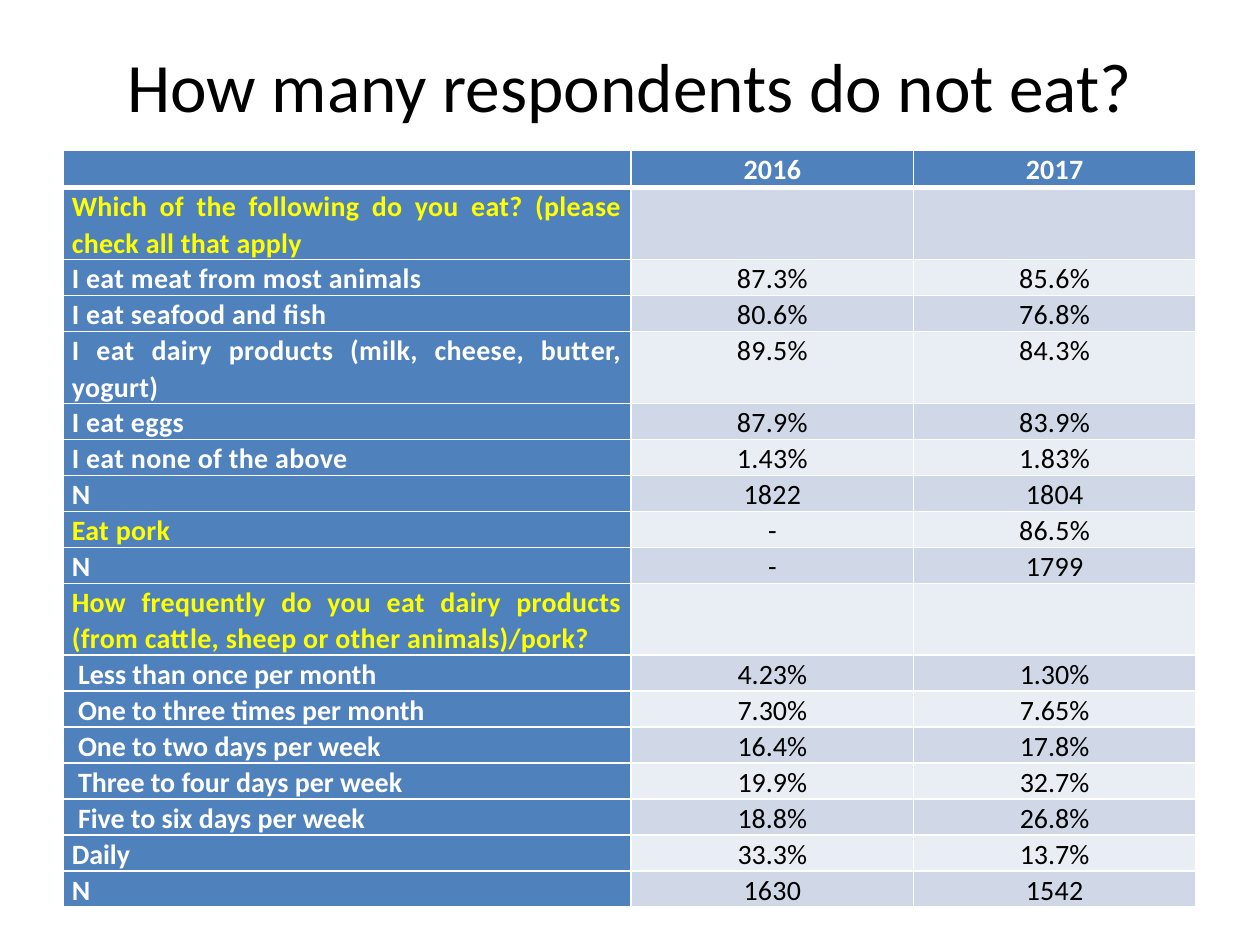
from lxml import etree
from pptx import Presentation
from pptx import util as u
from pptx.dml.color import RGBColor
from pptx.enum import text
from pptx.oxml.ns import qn

TITLE = "How many respondents do not eat?"
HEADER = ("", "2016", "2017")
ROWS = [
    ("question", "Which of the following do you eat? (please check all that apply", "", ""),
    ("answer", "I eat meat from most animals", "87.3%", "85.6%"),
    ("answer", "I eat seafood and fish", "80.6%", "76.8%"),
    ("answer", "I eat dairy products (milk, cheese, butter, yogurt)", "89.5%", "84.3%"),
    ("answer", "I eat eggs", "87.9%", "83.9%"),
    ("answer", "I eat none of the above", "1.43%", "1.83%"),
    ("answer", "N", "1822", "1804"),
    ("question", "Eat pork", "-", "86.5%"),
    ("answer", "N", "-", "1799"),
    ("question", "How frequently do you eat dairy products (from cattle, sheep or other animals)/pork?", "", ""),
    ("frequency", " Less than once per month", "4.23%", "1.30%"),
    ("frequency", " One to three times per month", "7.30%", "7.65%"),
    ("frequency", " One to two days per week", "16.4%", "17.8%"),
    ("frequency", " Three to four days per week", "19.9%", "32.7%"),
    ("frequency", " Five to six days per week", "18.8%", "26.8%"),
    ("frequency", "Daily", "33.3%", "13.7%"),
    ("answer", "N", "1630", "1542"),
]
THEME = {
    "font": "Calibri",
    "title_size": 39.6,
    "table_size": 16,
    "line_spacing": 1.07,
    "tracking": {"header": 20, "question": 20, "answer": 20, "frequency": 0},
    "label_colors": {"question": "FFFF00", "answer": "FFFFFF", "frequency": "FFFFFF"},
    "white": "FFFFFF",
    "black": "000000",
    "blue": "4F81BD",
    "bands": ("D0D8E8", "E9EDF4"),
}
COLUMN_WIDTHS = (4.51, 2.24, 2.24)
LINE_HEIGHT = 0.28
LINE_CHARACTERS = 45
ALIGN = text.PP_ALIGN
ANCHOR = text.MSO_ANCHOR


def set_all(target, values):
    for name, value in values.items():
        setattr(target, name, value)


def write(paragraph, words, size, color, bold=False, tracking=0):
    run = paragraph.add_run()
    run.text = words
    set_all(run.font, {"name": THEME["font"], "size": u.Pt(size), "bold": bold})
    run.font.color.rgb = RGBColor.from_string(color)
    run.font._element.set("spc", str(tracking))


def add_borders(cell, top, bottom):
    properties = cell._tc.get_or_add_tcPr()
    for index, (side, points) in enumerate(zip("LRTB", (1, 1, top, bottom))):
        line = etree.Element(qn(f"a:ln{side}"), w=str(u.Pt(points)))
        fill = etree.SubElement(line, qn("a:solidFill"))
        etree.SubElement(fill, qn("a:srgbClr"), val=THEME["white"])
        properties.insert(index, line)


def format_cell(cell, words, kind, row, column):
    is_header, is_label = kind == "header", column == 0
    if is_header:
        color = THEME["white"]
    else:
        color = THEME["label_colors"][kind] if is_label else THEME["black"]
    background = THEME["blue"] if is_header or is_label else THEME["bands"][(row - 1) % 2]
    label_align = ALIGN.LEFT if kind == "frequency" else ALIGN.JUSTIFY
    set_all(cell, {
        "margin_left": u.Inches(0.07), "margin_right": u.Inches(0.07),
        "margin_top": 0, "margin_bottom": 0,
        "vertical_anchor": ANCHOR.BOTTOM if kind == "frequency" else ANCHOR.TOP,
    })
    cell.fill.solid()
    cell.fill.fore_color.rgb = RGBColor.from_string(background)
    add_borders(cell, 3 if row == 1 else 1, 3 if is_header else 1)
    paragraph = cell.text_frame.paragraphs[0]
    set_all(paragraph, {
        "alignment": label_align if is_label else ALIGN.CENTER,
        "line_spacing": THEME["line_spacing"],
    })
    write(paragraph, words, THEME["table_size"], color,
          is_header or is_label, THEME["tracking"][kind])


def add_title(slide):
    box = slide.shapes.add_textbox(*map(u.Inches, (0.5, 0.3, 9, 0.74)))
    set_all(box.text_frame, {"word_wrap": True, "vertical_anchor": ANCHOR.MIDDLE})
    paragraph = box.text_frame.paragraphs[0]
    paragraph.alignment = ALIGN.CENTER
    write(paragraph, TITLE, THEME["title_size"], THEME["black"])


def add_survey_table(slide):
    rows = [("header", *HEADER), *ROWS]
    heights = [LINE_HEIGHT * (2 if len(row[1]) > LINE_CHARACTERS else 1) for row in rows]
    frame = slide.shapes.add_table(
        len(rows), len(HEADER), u.Inches(0.5), u.Inches(1.19),
        u.Inches(sum(COLUMN_WIDTHS)), u.Inches(sum(heights)))
    table = frame.table
    for column, width in zip(table.columns, COLUMN_WIDTHS):
        column.width = u.Inches(width)
    for index, (kind, *values) in enumerate(rows):
        table.rows[index].height = u.Inches(heights[index])
        for column, words in enumerate(values):
            format_cell(table.cell(index, column), words, kind, index, column)


def main():
    presentation = Presentation()
    set_all(presentation, {"slide_width": u.Inches(10), "slide_height": u.Inches(7.5)})
    slide = presentation.slides.add_slide(presentation.slide_layouts[6])
    add_title(slide)
    add_survey_table(slide)
    presentation.save("out.pptx")


if __name__ == "__main__":
    main()
